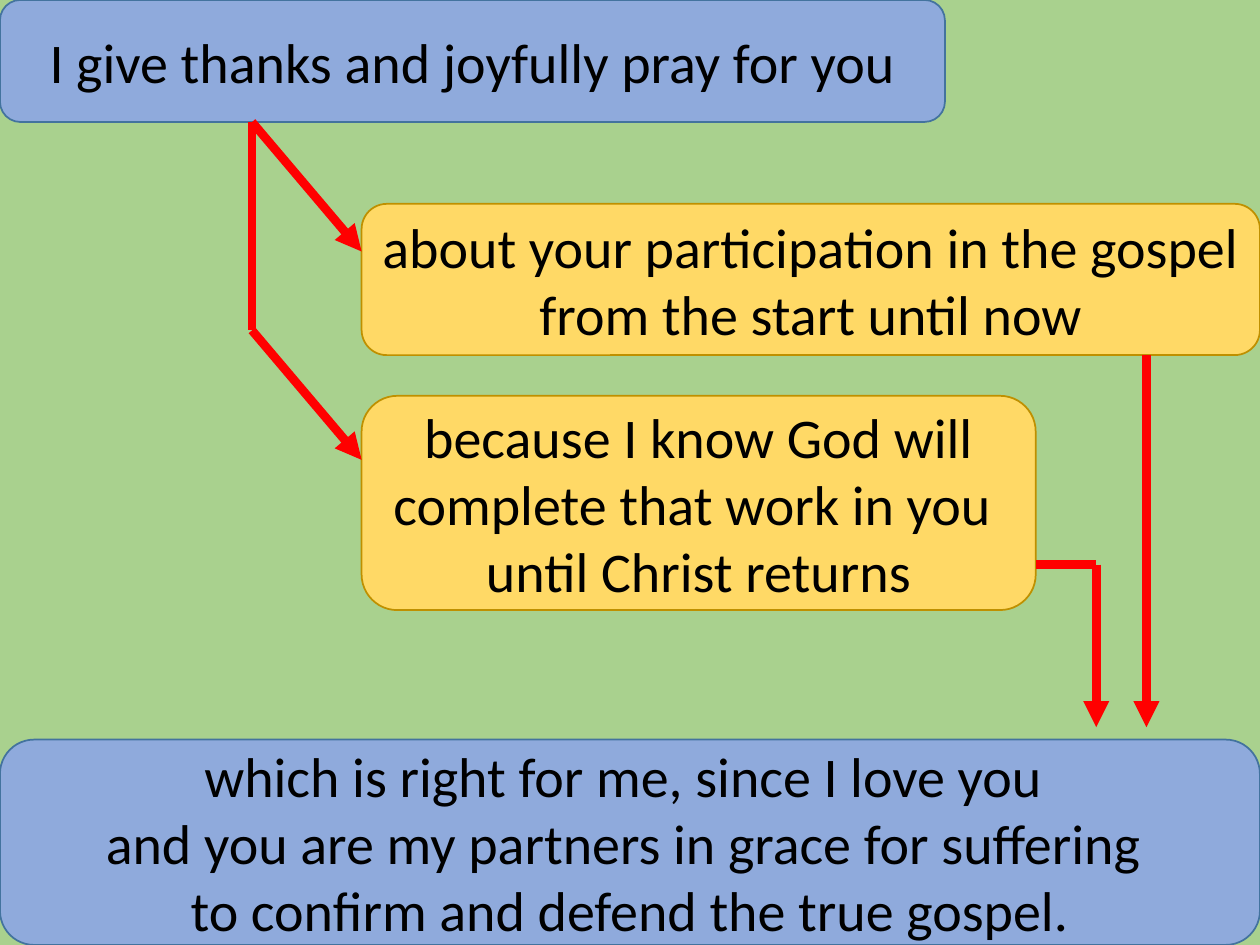
from collections import namedtuple

from lxml import etree
from pptx import Presentation
from pptx import util as u
from pptx.dml import color
from pptx.enum import shapes, text
from pptx.oxml import ns

Box = namedtuple("Box", "left top width height")

WIDTH, HEIGHT = 25.4, 19.05
BLUE, BLUE_EDGE = "8FAADC", "43739E"
GOLD, GOLD_EDGE = "FFD966", "BF9000"
GREEN, RED, BLACK = "A9D18E", "FF0000", "000000"

PRAYER = Box(0, 0, 19.05, 2.46)
PARTICIPATION = Box(7.29, 4.11, WIDTH - 7.29, 3.05)
CONFIDENCE = Box(7.29, 7.98, 13.59, 4.32)
CONCLUSION = Box(0, 14.91, WIDTH, HEIGHT - 14.91)


def paint(target, hex_color):
    target.solid()
    target.fore_color.rgb = color.RGBColor.from_string(hex_color)


def add_statement(slide, box, wording, fill, edge):
    statement = slide.shapes.add_shape(
        shapes.MSO_SHAPE.ROUNDED_RECTANGLE, *(u.Cm(length) for length in box))
    statement.shadow.inherit = False
    paint(statement.fill, fill)
    paint(statement.line.fill, edge)
    statement.line.width = u.Pt(1)
    frame = statement.text_frame
    frame.word_wrap = True
    frame.vertical_anchor = text.MSO_ANCHOR.MIDDLE
    frame.text = wording
    for paragraph in frame.paragraphs:
        paragraph.alignment = text.PP_ALIGN.CENTER
        for run in paragraph.runs:
            run.font.name = "Calibri"
            run.font.size = u.Pt(32)
            paint(run.font.fill, BLACK)


def add_link(slide, start, end, arrow=True):
    link = slide.shapes.add_connector(
        shapes.MSO_CONNECTOR.STRAIGHT, *(u.Cm(length) for length in start + end))
    paint(link.line.fill, RED)
    link.line.width = u.Pt(5)
    if arrow:
        outline = link.line.fill._xPr
        etree.SubElement(outline, ns.qn("a:tailEnd"), type="triangle")
    etree.SubElement(link._element.spPr, ns.qn("a:effectLst"))


def add_reason_links(slide, source, reasons):
    trunk = source.left + 5.08
    bottom = source.top + source.height
    drop = 2.61
    first, second = reasons
    bend = second.top + 1.29 - drop
    add_link(slide, (trunk, bottom), (first.left, bottom + drop))
    add_link(slide, (trunk, bend), (second.left, bend + drop))
    add_link(slide, (trunk, bottom), (trunk, bend), arrow=False)


def add_conclusion_links(slide, reasons, conclusion):
    first, second = reasons
    tip = conclusion.top - 0.25
    right = conclusion.left + conclusion.width
    outer, inner = right - 2.29, right - 3.3
    exit_level = second.top + 3.4
    add_link(slide, (outer, first.top + first.height), (outer, tip))
    add_link(slide, (inner, exit_level), (inner, tip))
    add_link(slide, (inner, exit_level),
             (second.left + second.width, exit_level), arrow=False)


def main():
    deck = Presentation()
    deck.slide_width, deck.slide_height = u.Cm(WIDTH), u.Cm(HEIGHT)
    slide = deck.slides.add_slide(deck.slide_layouts[6])
    paint(slide.background.fill, GREEN)

    add_statement(slide, PRAYER, "I give thanks and joyfully pray for you",
                  BLUE, BLUE_EDGE)
    add_statement(slide, PARTICIPATION,
                  "about your participation in the gospel from the start until now",
                  GOLD, GOLD_EDGE)
    add_statement(slide, CONFIDENCE,
                  "because I know God will complete that work in you \n"
                  "until Christ returns", GOLD, GOLD_EDGE)
    add_statement(slide, CONCLUSION,
                  "which is right for me, since I love you \n"
                  "and you are my partners in grace for suffering \n"
                  "to confirm and defend the true gospel.", BLUE, BLUE_EDGE)

    reasons = PARTICIPATION, CONFIDENCE
    add_reason_links(slide, PRAYER, reasons)
    add_conclusion_links(slide, reasons, CONCLUSION)
    deck.save("out.pptx")


if __name__ == "__main__":
    main()
